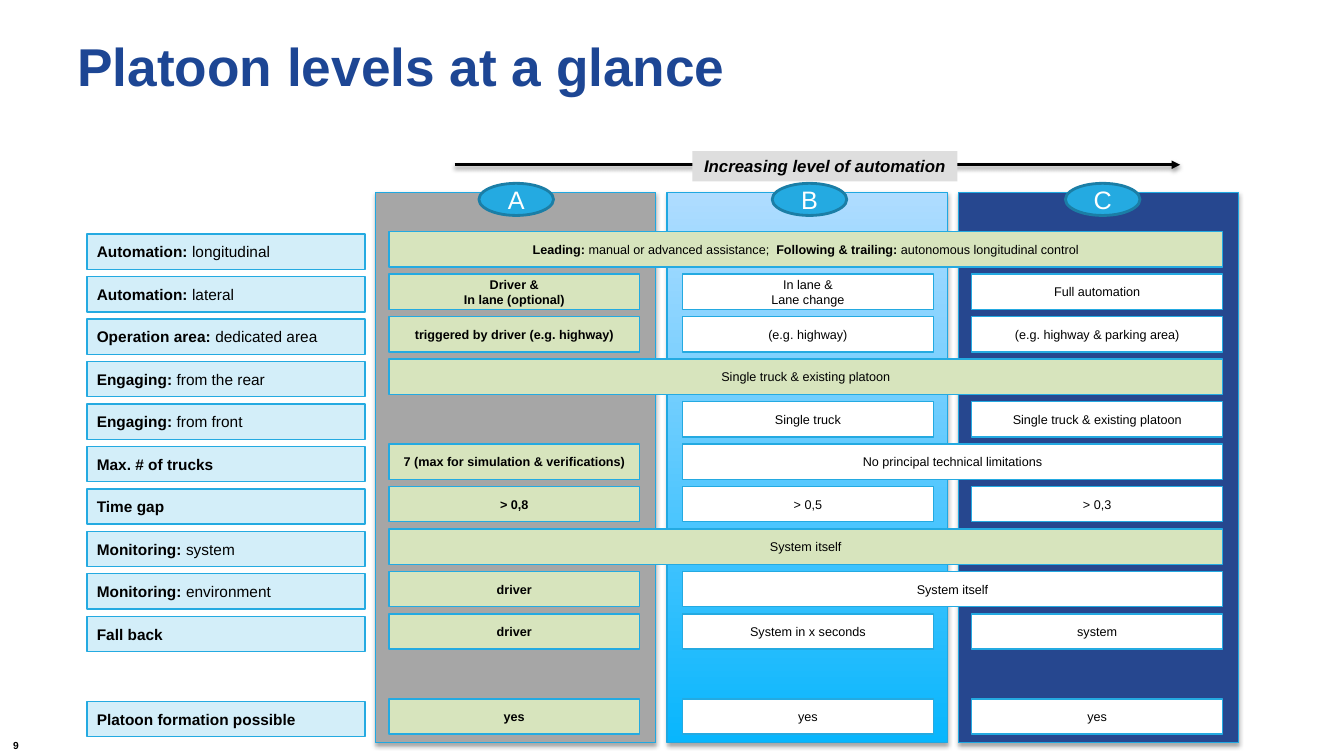
import pptx
import pptx.dml.color
import pptx.enum.shapes
import pptx.enum.text
import pptx.oxml
import pptx.oxml.ns
import pptx.util

Cm, Pt = pptx.util.Cm, pptx.util.Pt
RGB = pptx.dml.color.RGBColor.from_string
Kind = pptx.enum.shapes.MSO_SHAPE
Align = pptx.enum.text.PP_ALIGN
Anchor = pptx.enum.text.MSO_ANCHOR

# Text between ** marks is bold. A cell is (first column, columns covered, text).
TITLE = "**Platoon levels at a glance**"
TREND = "**Increasing level of automation**"
PAGE = "**9**"
LEVELS = [("A", "gray"), ("B", "sky"), ("C", "navy")]
ROWS = [
    (0, "**Automation:** longitudinal",
     [(0, 3, "**Leading:** manual or advanced assistance;  "
             "**Following & trailing:** autonomous longitudinal control")]),
    (1, "**Automation:** lateral",
     [(0, 1, "**Driver &**\n**In lane (optional)**"),
      (1, 1, "In lane &\nLane change"), (2, 1, "Full automation")]),
    (2, "**Operation area:** dedicated area",
     [(0, 1, "**triggered by driver (e.g. highway)**"),
      (1, 1, "(e.g. highway)"), (2, 1, "(e.g. highway & parking area)")]),
    (3, "**Engaging:** from the rear",
     [(0, 3, "Single truck & existing platoon")]),
    (4, "**Engaging:** from front",
     [(1, 1, "Single truck"), (2, 1, "Single truck & existing platoon")]),
    (5, "**Max. # of trucks**",
     [(0, 1, "**7 (max for simulation & verifications)**"),
      (1, 2, "No principal technical limitations")]),
    (6, "**Time gap**",
     [(0, 1, "**> 0,8**"), (1, 1, "> 0,5"), (2, 1, "> 0,3")]),
    (7, "**Monitoring:** system", [(0, 3, "System itself")]),
    (8, "**Monitoring:** environment",
     [(0, 1, "**driver**"), (1, 2, "System itself")]),
    (9, "**Fall back**",
     [(0, 1, "**driver**"), (1, 1, "System in x seconds"), (2, 1, "system")]),
    (11, "**Platoon formation possible**",
     [(0, 1, "**yes**"), (1, 1, "yes"), (2, 1, "yes")]),
]

THEME = {
    "font": "Arial",
    "size": {"title": 38, "level": 18, "trend": 12, "label": 11,
             "cell": 9, "page": 7.3},
    "color": {"title": "1D4694", "text": "000000", "white": "FFFFFF",
              "label": "D3EEF9", "edge": "24AAE1", "rim": "1FA8E1",
              "gray": "A6A6A6", "navy": "26478F", "low": "08B6FD",
              "high": "AFDCFF", "green": "D7E4BD", "oval": "24AAE1",
              "ring": "1B7EA6", "trend": "DEDEDE"},
}

ROW_TOP, ROW_STEP, ROW_HIGH = 5.84, 1.07, 0.89
CELL_LEFT, CELL_WIDE = (9.8, 17.2, 24.49), 6.32
COL_LEFT, COL_STEP, COL_WIDE = 9.47, 7.34, 7.06
OVAL_LEFT, OVAL_STEP = 12.07, 7.39


def color(name):
    return RGB(THEME["color"][name])


def write(shape, text, role, tint="text", align=Align.CENTER,
          anchor=Anchor.MIDDLE, pad=0.25, wrap=True, slant=None):
    """Fill a shape with text, making the parts between ** marks bold."""
    frame = shape.text_frame
    frame.word_wrap = wrap
    frame.vertical_anchor = anchor
    frame.margin_left = frame.margin_right = Cm(pad)
    frame.margin_top = frame.margin_bottom = 0
    for num, line in enumerate(text.split("\n")):
        para = frame.add_paragraph() if num else frame.paragraphs[0]
        para.alignment = align
        parts = [(bit, pos % 2 == 1)
                 for pos, bit in enumerate(line.split("**")) if bit]
        mixed = len(parts) > 1
        font = para.font
        font.name = THEME["font"]
        font.size = Pt(THEME["size"][role])
        font.color.rgb = color(tint)
        font.italic = slant
        if not mixed:
            font.bold = parts[0][1]
        for bit, bold in parts:
            run = para.add_run()
            run.text = bit
            if mixed:
                run.font.bold = bold


def draw(slide, box, fill, edge=None, width=1, kind=Kind.RECTANGLE):
    shape = slide.shapes.add_shape(kind, *map(Cm, box))
    shape.shadow.inherit = False
    if fill == "sky":
        shape.fill.gradient()
        shape.fill.gradient_angle = 90
        for stop, name in zip(shape.fill.gradient_stops, ("low", "high")):
            stop.color.rgb = color(name)
    else:
        shape.fill.solid()
        shape.fill.fore_color.rgb = color(fill)
    if edge:
        shape.line.color.rgb = color(edge)
        shape.line.width = Pt(width)
    else:
        shape.line.fill.background()
    return shape


def shade(props, alpha):
    """Give shape properties a soft shadow that falls straight down."""
    for old in props.findall(pptx.oxml.ns.qn("a:effectLst")):
        props.remove(old)
    props.append(pptx.oxml.parse_xml(
        f'<a:effectLst {pptx.oxml.ns.nsdecls("a")}>'
        '<a:outerShdw blurRad="40000" dist="22000" dir="5400000" '
        'rotWithShape="0"><a:srgbClr val="000000">'
        f'<a:alpha val="{alpha}000"/></a:srgbClr></a:outerShdw>'
        '</a:effectLst>'))


def note(slide, box, text, role, **style):
    write(slide.shapes.add_textbox(*map(Cm, box)), text, role, **style)


def add_grid(slide):
    for num, (_, fill) in enumerate(LEVELS):
        left = COL_LEFT + num * COL_STEP
        panel = draw(slide, (left, 4.85, COL_WIDE, 13.87), fill, "rim", 0.75)
        shade(panel._element.spPr, 35)
    for row, label, cells in ROWS:
        top = ROW_TOP + row * ROW_STEP
        box = draw(slide, (2.19, top + 0.06, 7.01, ROW_HIGH), "label", "edge")
        write(box, label, "label", align=Align.LEFT)
        for col, span, text in cells:
            left = CELL_LEFT[col]
            wide = CELL_LEFT[col + span - 1] + CELL_WIDE - left
            fill = "white" if col else "green"
            cell = draw(slide, (left, top, wide, ROW_HIGH), fill, "edge")
            write(cell, text, "cell")
    for num, (name, _) in enumerate(LEVELS):
        left = OVAL_LEFT + num * OVAL_STEP
        oval = draw(slide, (left, 4.62, 1.88, 0.81), "oval", "ring", 2,
                    Kind.OVAL)
        write(oval, name, "level", "white", pad=0)


def add_trend(slide):
    arrow = slide.shapes.add_connector(
        pptx.enum.shapes.MSO_CONNECTOR.STRAIGHT,
        Cm(11.46), Cm(4.15), Cm(29.74), Cm(4.15))
    arrow.line.color.rgb = color("text")
    arrow.line.width = Pt(2)
    arrow.line._get_or_add_ln().append(pptx.oxml.parse_xml(
        f'<a:tailEnd {pptx.oxml.ns.nsdecls("a")} type="triangle"/>'))
    shade(arrow._element.spPr, 38)
    box = draw(slide, (17.45, 3.81, 6.68, 0.76), "trend")
    write(box, TREND, "trend", wrap=False, slant=True)


def main():
    deck = pptx.Presentation()
    deck.slide_width, deck.slide_height = Cm(33.87), Cm(19.05)
    slide = deck.slides.add_slide(deck.slide_layouts[6])
    note(slide, (1.7, 0.76, 30.48, 1.78), TITLE, "title", tint="title",
         align=Align.LEFT)
    add_grid(slide)
    add_trend(slide)
    note(slide, (0.33, 18.29, 15.37, 0.76 - 0.12), PAGE, "page",
         align=Align.LEFT, anchor=Anchor.BOTTOM, pad=0)
    deck.save("out.pptx")


if __name__ == "__main__":
    main()
